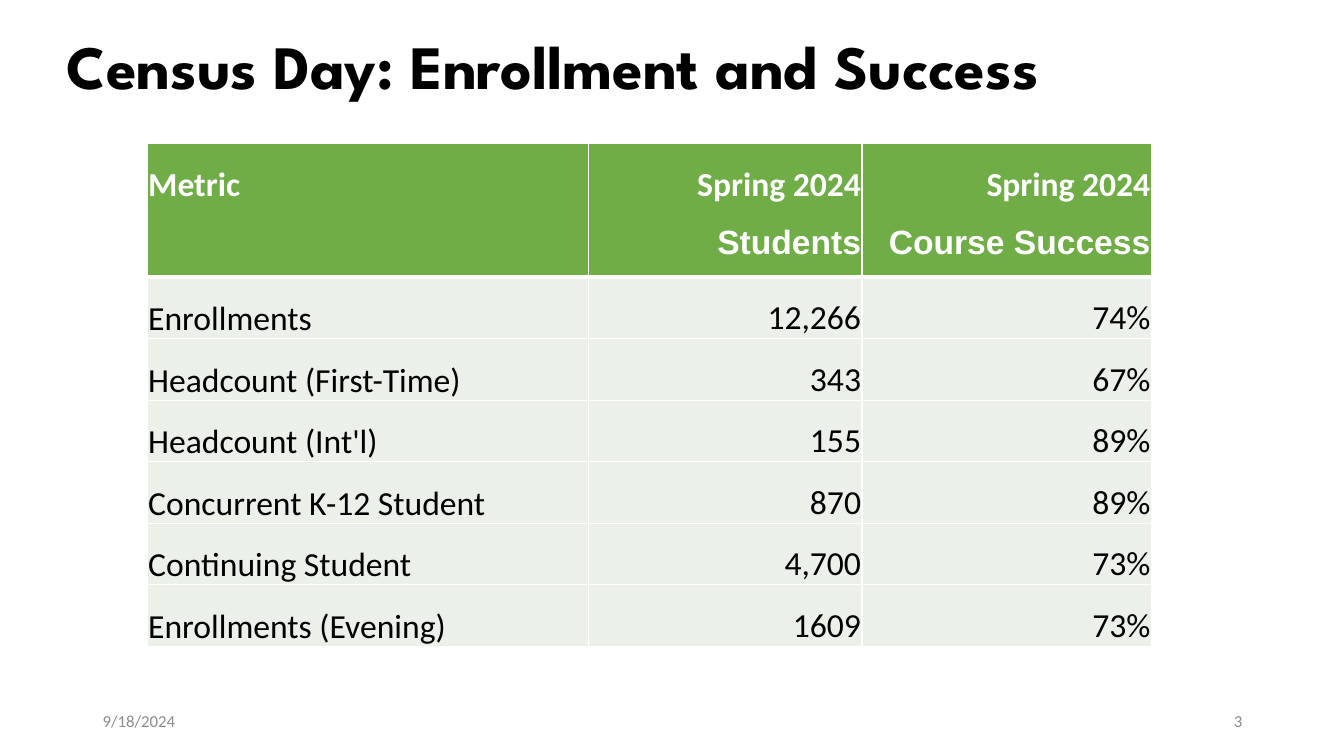
from lxml.etree import SubElement
from pptx import Presentation
from pptx.dml.color import RGBColor
from pptx.enum.text import MSO_ANCHOR, PP_ALIGN
from pptx.oxml.ns import qn
from pptx.util import Inches, Pt

HEADERS = [["Metric"], ["Spring 2024", "Students"], ["Spring 2024", "Course Success"]]
METRICS = [
    ("Enrollments", "12,266", "74%"),
    ("Headcount (First-Time)", "343", "67%"),
    ("Headcount (Int'l)", "155", "89%"),
    ("Concurrent K-12 Student", "870", "89%"),
    ("Continuing Student", "4,700", "73%"),
    ("Enrollments (Evening)", "1609", "73%"),
]
COLUMN_WIDTHS = [4.38, 2.71, 2.87]
HEADER_HEIGHT = 1.33
ROW_HEIGHT = 0.61
BORDER = "FFFFFF"


def color(value):
    return RGBColor.from_string(value)


def format_paragraph(paragraph, size, fill, name="Calibri", bold=False,
                     align=PP_ALIGN.LEFT, spacing=1.0):
    font = paragraph.font
    font.size, font.name, font.bold = Pt(size), name, bold
    font.color.rgb = color(fill)
    paragraph.alignment = align
    paragraph.line_spacing = spacing


def add_title(slide, left, top, width, height):
    title = slide.shapes.title
    title.left, title.top = Inches(left), Inches(top)
    title.width, title.height = Inches(width), Inches(height)
    frame = title.text_frame
    frame.text = "Census Day: Enrollment and Success"
    frame.vertical_anchor = MSO_ANCHOR.MIDDLE
    format_paragraph(frame.paragraphs[0], 44, "000000", "League Spartan", True, spacing=0.9)


def add_footer(slide, text, left, top, width, height, align):
    box = slide.shapes.add_textbox(Inches(left), Inches(top), Inches(width), Inches(height))
    frame = box.text_frame
    frame.word_wrap = True
    frame.vertical_anchor = MSO_ANCHOR.MIDDLE
    frame.text = text
    format_paragraph(frame.paragraphs[0], 12, "8C8C8C", align=align)


def set_borders(cell, top, bottom):
    properties = cell._tc.get_or_add_tcPr()
    for side, points in (("L", 1), ("R", 1), ("T", top), ("B", bottom)):
        line = SubElement(properties, qn(f"a:ln{side}"), w=str(Pt(points)))
        fill = SubElement(line, qn("a:solidFill"))
        SubElement(fill, qn("a:srgbClr"), val=BORDER)


def fill_cell(cell, lines, row, column):
    is_header = row == 0
    is_label = column == 0
    set_borders(cell, 3 if row == 1 else 1, 3 if is_header else 1)
    cell.fill.solid()
    cell.fill.fore_color.rgb = color("70AD47" if is_header else "EBF1E9")
    cell.margin_left = cell.margin_right = cell.margin_top = Inches(0.01)
    cell.margin_bottom = 0
    cell.vertical_anchor = MSO_ANCHOR.TOP if is_header or is_label else MSO_ANCHOR.BOTTOM
    cell.text_frame.text = "\n".join(lines)
    for index, paragraph in enumerate(cell.text_frame.paragraphs):
        format_paragraph(
            paragraph, 24, "FFFFFF" if is_header else "000000",
            "Arial" if index else "Calibri", is_header,
            PP_ALIGN.LEFT if is_label else PP_ALIGN.RIGHT,
            1.5 if is_header or is_label else 1.0)


def add_metric_table(slide, left, top):
    rows = [HEADERS] + [[[text] for text in metric] for metric in METRICS]
    heights = [HEADER_HEIGHT] + [ROW_HEIGHT] * len(METRICS)
    frame = slide.shapes.add_table(
        len(rows), len(COLUMN_WIDTHS), Inches(left), Inches(top),
        Inches(sum(COLUMN_WIDTHS)), Inches(sum(heights)))
    table = frame.table
    table.horz_banding = False
    for column, width in zip(table.columns, COLUMN_WIDTHS):
        column.width = Inches(width)
    for row, height in zip(table.rows, heights):
        row.height = Inches(height)
    for row, cells in enumerate(rows):
        for column, lines in enumerate(cells):
            fill_cell(table.cell(row, column), lines, row, column)


def main():
    presentation = Presentation()
    presentation.slide_width, presentation.slide_height = Inches(13.33), Inches(7.5)
    slide = presentation.slides.add_slide(presentation.slide_layouts[5])
    add_title(slide, 0.56, 0.28, 12.96, 0.82)
    add_footer(slide, "9/18/2024", 0.92, 6.95, 3, 0.4, PP_ALIGN.LEFT)
    add_footer(slide, "3", 9.42, 6.95, 3, 0.4, PP_ALIGN.RIGHT)
    add_metric_table(slide, 1.46, 1.42)
    presentation.save("out.pptx")


if __name__ == "__main__":
    main()
